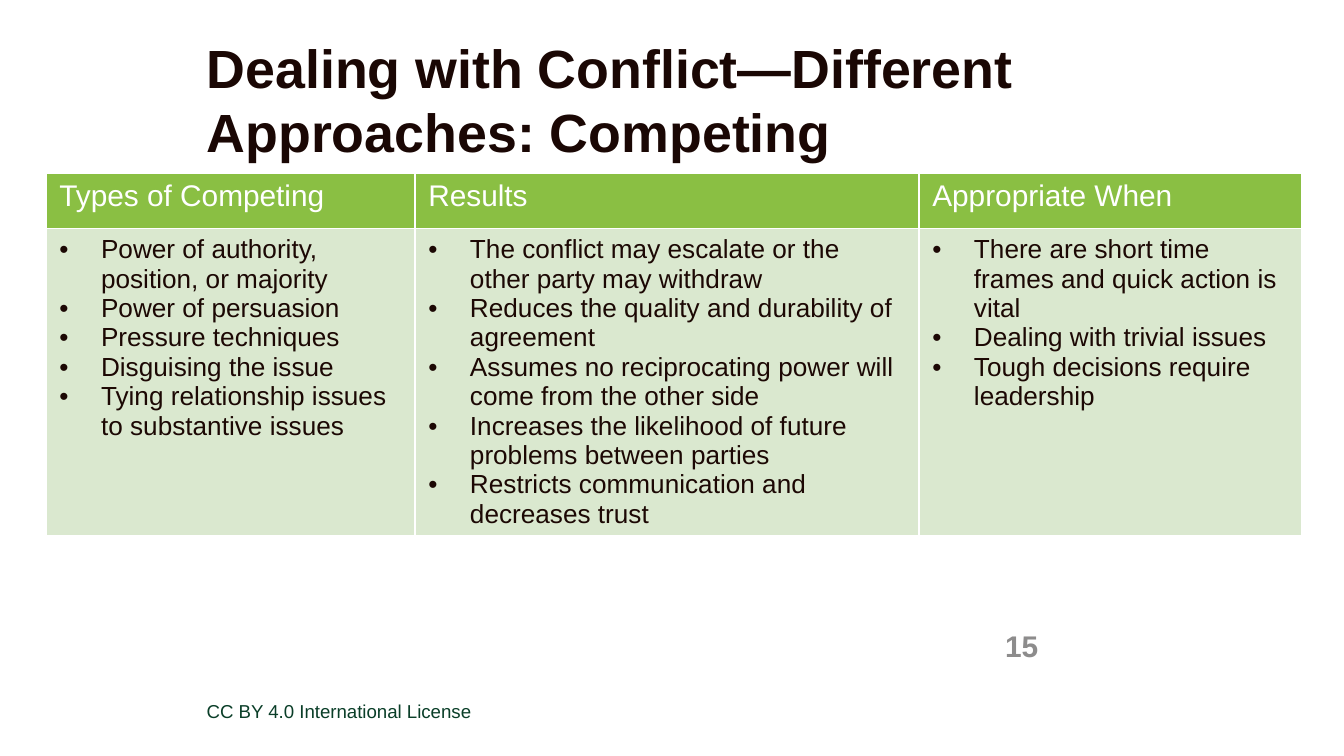
from dataclasses import dataclass

from lxml import etree
from pptx import Presentation
from pptx import util as u
from pptx.dml.color import RGBColor
from pptx.enum import text
from pptx.oxml.ns import qn

WIDTH = u.Inches(10)
HEIGHT = WIDTH * 9 // 16
FONT = "Arial"
TITLE_INK = RGBColor(0x1A, 0x07, 0x04)
BODY_INK = RGBColor(0x1C, 0x08, 0x04)
LICENSE_GREEN = RGBColor(0x0A, 0x3E, 0x28)
NUMBER_GRAY = RGBColor(0x8D, 0x8C, 0x8C)
HEADER_GREEN = RGBColor(0x8A, 0xBF, 0x43)
PALE_GREEN = RGBColor(0xDA, 0xE8, 0xCF)
WHITE = RGBColor(0xFF, 0xFF, 0xFF)
LEFT_MARGIN = 15.38  # percent of the slide width
INDENT = u.Inches(0.31)


@dataclass(frozen=True)
class Area:
    """A place on the slide, in percent of its width and height."""
    left: float
    top: float
    width: float
    height: float

    def box(self) -> tuple[int, int, int, int]:
        return (across(self.left), down(self.top),
                across(self.width), down(self.height))


@dataclass(frozen=True)
class Column:
    heading: str
    width: float
    points: tuple[str, ...]


COLUMNS = (
    Column("Types of Competing", 27.45, (
        "Power of authority, position, or majority",
        "Power of persuasion",
        "Pressure techniques",
        "Disguising the issue",
        "Tying relationship issues to substantive issues",
    )),
    Column("Results", 37.5, (
        "The conflict may escalate or the other party may withdraw",
        "Reduces the quality and durability of agreement",
        "Assumes no reciprocating power will come from the other side",
        "Increases the likelihood of future problems between parties",
        "Restricts communication and decreases trust",
    )),
    Column("Appropriate When", 28.47, (
        "There are short time frames and quick action is vital",
        "Dealing with trivial issues",
        "Tough decisions require leadership",
    )),
)
ROW_COUNT = 2
ROW_HEIGHT = 7.29  # least height; the second row grows with its text


def across(percent: float) -> int:
    return round(WIDTH * percent / 100)


def down(percent: float) -> int:
    return round(HEIGHT * percent / 100)


def style(paragraph, size: float, color: RGBColor, bold: bool = False) -> None:
    font = paragraph.font
    font.name, font.size, font.bold = FONT, u.Pt(size), bold
    font.color.rgb = color


def set_frame(frame, anchor, top_inset: float = 0) -> None:
    frame.word_wrap = True
    frame.auto_size = text.MSO_AUTO_SIZE.NONE
    frame.vertical_anchor = anchor
    frame.margin_left = frame.margin_right = frame.margin_bottom = 0
    frame.margin_top = u.Inches(top_inset)


def add_label(slide, area: Area, words: str, anchor, top_inset: float = 0):
    frame = slide.shapes.add_textbox(*area.box()).text_frame
    set_frame(frame, anchor, top_inset)
    frame.text = words
    return frame.paragraphs[0]


def add_bullet(paragraph) -> None:
    properties = paragraph._p.get_or_add_pPr()
    properties.set("marL", str(INDENT))
    properties.set("indent", str(-INDENT))
    etree.SubElement(properties, qn("a:buFont"), typeface=FONT)
    etree.SubElement(properties, qn("a:buChar"), char="•")


def outline_cell(cell) -> None:
    """Draw a thin white line on all four sides; call before filling."""
    properties = cell._tc.get_or_add_tcPr()
    for side in ("lnL", "lnR", "lnT", "lnB"):
        line = etree.SubElement(properties, qn(f"a:{side}"), w=str(u.Pt(1)))
        fill = etree.SubElement(line, qn("a:solidFill"))
        etree.SubElement(fill, qn("a:srgbClr"), val=str(WHITE))


def fill_cell(cell, color: RGBColor) -> None:
    cell.fill.solid()
    cell.fill.fore_color.rgb = color


def add_comparison(slide, area: Area) -> None:
    holder = slide.shapes.add_table(ROW_COUNT, len(COLUMNS), *area.box())
    table = holder.table
    for row in table.rows:
        row.height = down(ROW_HEIGHT)
    for index, column in enumerate(COLUMNS):
        table.columns[index].width = across(column.width)
        heading, details = table.cell(0, index), table.cell(1, index)
        heading.text = column.heading
        style(heading.text_frame.paragraphs[0], 16, WHITE)
        fill_cell(heading, HEADER_GREEN)

        details.text = "\n".join(column.points)
        for point in details.text_frame.paragraphs:
            add_bullet(point)
            style(point, 14, BODY_INK)
        outline_cell(details)
        fill_cell(details, PALE_GREEN)
    holder.height = down(area.height)


def main() -> None:
    deck = Presentation()
    deck.slide_width, deck.slide_height = WIDTH, HEIGHT
    slide = deck.slides.add_slide(deck.slide_layouts.get_by_name("Title Only"))

    title = slide.shapes.title
    title.left, title.top, title.width, title.height = Area(
        LEFT_MARGIN, 4.62, 79.6, 7.11).box()
    set_frame(title.text_frame, text.MSO_ANCHOR.TOP)
    title.text_frame.text = "Dealing with Conflict—Different Approaches: Competing"
    headline = title.text_frame.paragraphs[0]
    headline.alignment = text.PP_ALIGN.LEFT
    headline.line_spacing = u.Pt(34.3)
    style(headline, 28.8, TITLE_INK, bold=True)

    license_line = add_label(slide, Area(LEFT_MARGIN, 92.62, 59.9, 2.67),
                             "CC BY 4.0 International License",
                             text.MSO_ANCHOR.TOP)
    style(license_line, 10, LICENSE_GREEN)

    page_number = add_label(slide, Area(71.05, 82.31, 6.2, 5.33), "15",
                            text.MSO_ANCHOR.MIDDLE, 0.05)
    page_number.alignment = text.PP_ALIGN.RIGHT
    style(page_number, 16, NUMBER_GRAY, bold=True)

    add_comparison(slide, Area(3.42, 22.93, 93.42, 50.49))
    deck.save("out.pptx")


if __name__ == "__main__":
    main()
